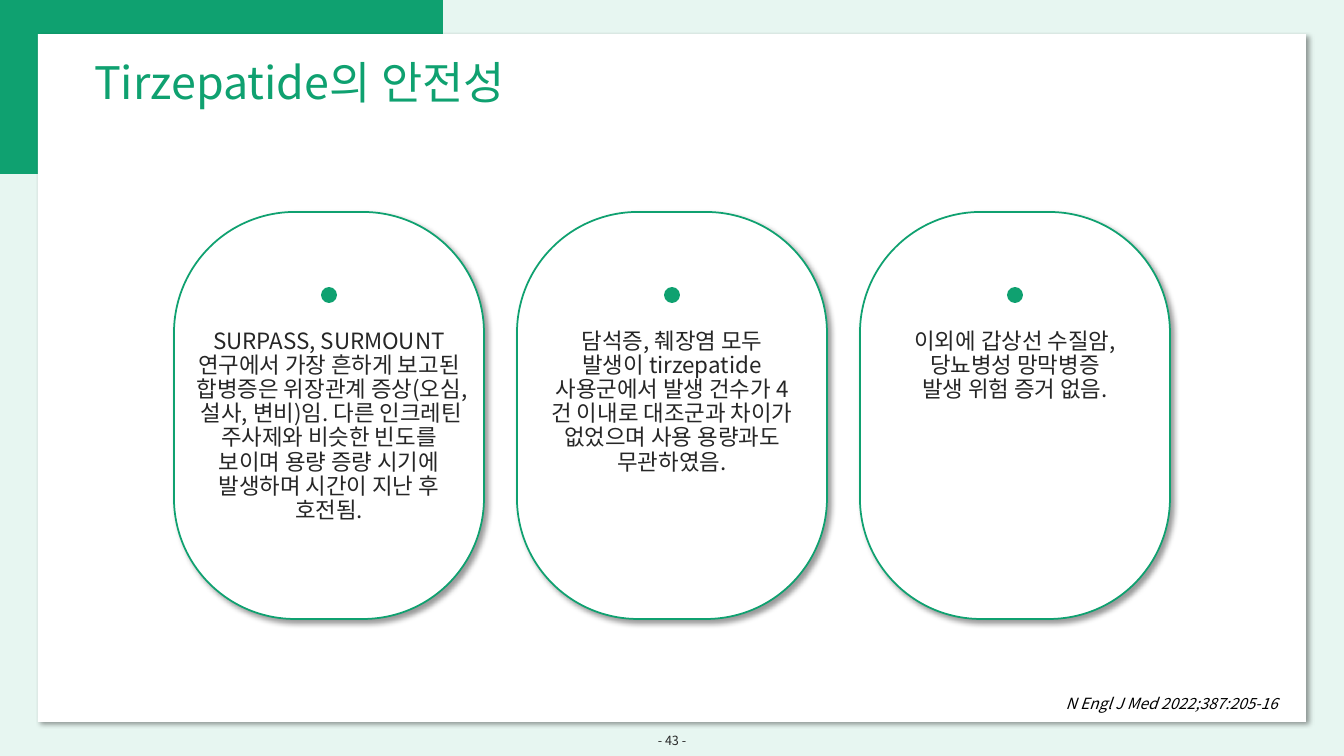
from lxml.etree import SubElement
from pptx import Presentation
from pptx.dml.color import RGBColor
from pptx.enum.shapes import MSO_SHAPE as Preset
from pptx.enum.text import MSO_ANCHOR as Anchor, MSO_AUTO_SIZE as AutoSize, PP_ALIGN as Align
from pptx.oxml.ns import qn
from pptx.util import Emu, Pt

EMU_PER_PX = 914400 / 100.8
COLORS = {
    "green": "0FA170",
    "mint": "E7F6F1",
    "white": "FFFFFF",
    "text": "262626",
    "black": "000000",
}
CARD_TEXTS = [
    (289, "SURPASS, SURMOUNT 연구에서 가장 흔하게 보고된 합병증은 위장관계 증상(오심, 설사, 변비)임. "
          "다른 인크레틴 주사제와 비슷한 빈도를 보이며 용량 증량 시기에 발생하며 시간이 지난 후 호전됨."),
    (266, "담석증, 췌장염 모두 발생이 tirzepatide 사용군에서 발생 건수가 4건 이내로 "
          "대조군과 차이가 없었으며 사용 용량과도 무관하였음."),
    (233, "이외에 갑상선 수질암, 당뇨병성 망막병증 발생 위험 증거 없음."),
]
CARD_LEFT, CARD_TOP, CARD_WIDTH, CARD_HEIGHT, CARD_PITCH = 174, 212, 310, 407, 343
DOT_SIZE = 16


def px(length):
    return Emu(round(length * EMU_PER_PX))


def rgb(name):
    return RGBColor.from_string(COLORS[name])


class SlideBuilder:
    font_name = "Noto Sans CJK KR"

    def __init__(self, presentation):
        self.slide = presentation.slides.add_slide(presentation.slide_layouts[5])

    def background(self, color):
        fill = self.slide.background.fill
        fill.solid()
        fill.fore_color.rgb = rgb(color)

    def shape(self, parent, preset, box, fill, line=None, shadow=False):
        shape = parent.shapes.add_shape(preset, *map(px, box))
        shape.fill.solid()
        shape.fill.fore_color.rgb = rgb(fill)
        if line:
            shape.line.color.rgb = rgb(line)
            shape.line.width = Pt(1.25)
        else:
            shape.line.fill.background()
        shape.shadow.inherit = False
        if shadow:
            self.drop_shadow(shape)
        return shape

    def drop_shadow(self, shape):
        effects = shape.element.spPr.find(qn("a:effectLst"))
        shadow = SubElement(effects, qn("a:outerShdw"), blurRad=str(Pt(4)), dist=str(Pt(3)),
                            dir="2700000", algn="tl", rotWithShape="0")
        color = SubElement(shadow, qn("a:srgbClr"), val=COLORS["black"])
        SubElement(color, qn("a:alpha"), val="40000")

    def title(self, box, text):
        title = self.slide.shapes.title
        title.left, title.top, title.width, title.height = map(px, box)
        title.element.getparent().append(title.element)  # bring above the panel
        self.set_text(title.text_frame, text, 32, "green", Align.LEFT, line_spacing=0.9)

    def text(self, parent, box, text, size, color, align, anchor=Anchor.TOP, **style):
        frame = parent.shapes.add_textbox(*map(px, box)).text_frame
        self.set_text(frame, text, size, color, align, anchor, **style)

    def set_text(self, frame, text, size, color, align, anchor=Anchor.TOP,
                 line_spacing=None, space_after=0, italic=False):
        frame.word_wrap = True
        frame.auto_size = AutoSize.NONE
        frame.vertical_anchor = anchor
        paragraph = frame.paragraphs[0]
        paragraph.alignment = align
        paragraph.line_spacing = line_spacing
        paragraph.space_before = Pt(0)
        paragraph.space_after = Pt(space_after)
        run = paragraph.add_run()
        run.text = text
        run.font.size = Pt(size)
        run.font.italic = italic
        run.font.color.rgb = rgb(color)
        run.font.name = self.font_name
        SubElement(run._r.get_or_add_rPr(), qn("a:ea"), typeface=self.font_name)

    def card(self, left, text_width, text):
        group = self.slide.shapes.add_group_shape()
        outline = self.shape(group, Preset.ROUNDED_RECTANGLE,
                             (left, CARD_TOP, CARD_WIDTH, CARD_HEIGHT), "white", "green", shadow=True)
        outline.adjustments[0] = 0.39
        center = left + CARD_WIDTH / 2
        self.text(group, (center - text_width / 2, 325, text_width, 200), text, 16, "text",
                  Align.CENTER, line_spacing=0.9, space_after=6)
        self.shape(group, Preset.OVAL, (center - DOT_SIZE / 2, 287, DOT_SIZE, DOT_SIZE), "green")


def main():
    presentation = Presentation()
    presentation.slide_width, presentation.slide_height = px(1344), px(756)
    builder = SlideBuilder(presentation)
    slide = builder.slide
    builder.background("mint")
    builder.text(slide, (549, 721, 246, 40), "- 43 -", 9, "text", Align.CENTER, Anchor.MIDDLE)
    builder.shape(slide, Preset.RECTANGLE, (0, 0, 443, 174), "green")
    builder.shape(slide, Preset.RECTANGLE, (38, 34, 1268, 688), "white", shadow=True)
    builder.title((84, 56, 1188, 65), "Tirzepatide의 안전성")
    for index, (text_width, text) in enumerate(CARD_TEXTS):
        builder.card(CARD_LEFT + index * CARD_PITCH, text_width, text)
    builder.text(slide, (966, 689, 322, 29), "N Engl J Med 2022;387:205-16", 11, "black",
                 Align.RIGHT, italic=True)
    presentation.save("out.pptx")


if __name__ == "__main__":
    main()
